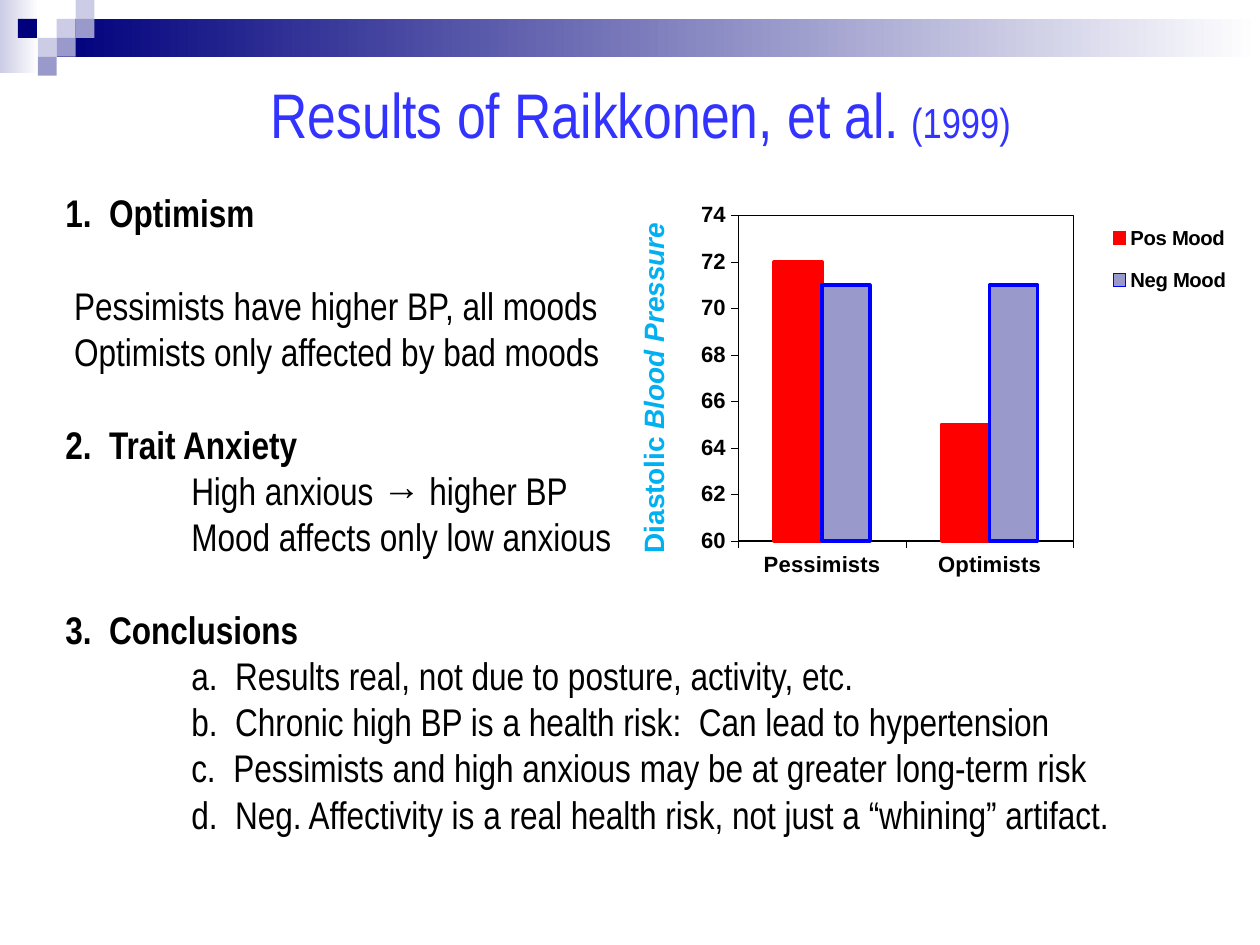
from lxml import etree
from pptx import Presentation
from pptx.chart.data import CategoryChartData
from pptx.dml.color import RGBColor
from pptx.enum.chart import XL_CHART_TYPE, XL_LEGEND_POSITION, XL_TICK_MARK
from pptx.enum.shapes import MSO_SHAPE
from pptx.enum.text import PP_ALIGN
from pptx.oxml import parse_xml
from pptx.oxml.ns import nsdecls, qn
from pptx.util import Inches, Pt

RECT = MSO_SHAPE.RECTANGLE
CENTER = PP_ALIGN.CENTER
CLUSTERED = XL_CHART_TYPE.COLUMN_CLUSTERED
RIGHT = XL_LEGEND_POSITION.RIGHT
OUTSIDE = XL_TICK_MARK.OUTSIDE


def rgb(color):
    return RGBColor.from_string(color)


def style(font, name, size, color, bold=False, italic=False):
    font.name = name
    font.size = Pt(size)
    font.color.rgb = rgb(color)
    font.bold = bold
    font.italic = italic


prs = Presentation()
prs.slide_width = Inches(10)
prs.slide_height = Inches(7.5)
s = prs.slides.add_slide(prs.slide_layouts[6])

CELL = 0.15
bands = [
    (0, 0, 0.31, 0.58, "CCCCE6"),
    (0.45, CELL, 9.55, 0.3, "00007D"),
]
squares = [
    (3, 1, "CCCCE6"),
    (4, 0, "CCCCE6"),
    (4, 1, "9999CC"),
    (2, 2, "CCCCE6"),
    (0.95, 1, "00007D"),
    (3, 2, "9999CC"),
    (2, 3, "9999CC"),
]
for x, y, w, h, color in bands:
    sp = s.shapes.add_shape(RECT, Inches(x), Inches(y), Inches(w), Inches(h))
    sp.shadow.inherit = False
    sp.line.fill.background()
    sp.fill.gradient()
    sp.fill.gradient_angle = 0
    for stop, stop_color, position in zip(sp.fill.gradient_stops, (color, "FFFFFF"), (0, 1)):
        stop.color.rgb = rgb(stop_color)
        stop.position = position
for col, row, color in squares:
    sp = s.shapes.add_shape(RECT, Inches(col * CELL), Inches(row * CELL), Inches(CELL), Inches(CELL))
    sp.shadow.inherit = False
    sp.line.fill.background()
    sp.fill.solid()
    sp.fill.fore_color.rgb = rgb(color)

sections = [
    ("1.  Optimism", 0.07, 0.37, [
        "Pessimists have higher BP, all moods",
        "Optimists only affected by bad moods",
    ]),
    ("2.  Trait Anxiety", 1, 0, [
        "High anxious → higher BP",
        "Mood affects only low anxious",
    ]),
    ("3.  Conclusions", 1, 0, [
        "a.  Results real, not due to posture, activity, etc.",
        "b.  Chronic high BP is a health risk:  Can lead to hypertension",
        "c.  Pessimists and high anxious may be at greater long-term risk",
        "d.  Neg. Affectivity is a real health risk, not just a “whining” artifact.",
    ]),
]
tf = s.shapes.add_textbox(Inches(0.42), Inches(1.45), Inches(9), Inches(5.28)).text_frame
tf.word_wrap = True
for i, (heading, indent, gap, points) in enumerate(sections):
    p = tf.add_paragraph() if i else tf.paragraphs[0]
    p.text = heading
    p.space_before = Inches(0.37 if i else 0)
    p.space_after = Inches(gap)
    style(p.runs[0].font, "Arial Narrow", 22, "000000", bold=True)
    for point in points:
        p = tf.add_paragraph()
        p.text = point
        p._p.get_or_add_pPr().set("marL", str(Inches(indent)))
        style(p.runs[0].font, "Arial Narrow", 22, "000000")

tf = s.shapes.add_textbox(Inches(1.25), Inches(0.55), Inches(7.67), Inches(0.7)).text_frame
tf.word_wrap = True
p = tf.paragraphs[0]
p.alignment = CENTER
for text, font, size in [
    ("Results of Raikkonen, et al.", "Arial Narrow", 36),
    (" ", "Arial", 24),
    ("(1999)", "Arial Narrow", 24),
]:
    r = p.add_run()
    r.text = text
    style(r.font, font, size, "3333FF")

data = CategoryChartData()
data.categories = ["Pessimists", "Optimists"]
data.add_series("Pos Mood", (72, 65))
data.add_series("Neg Mood", (71, 71))
chart = s.shapes.add_chart(CLUSTERED, Inches(5.31), Inches(1.44), Inches(4.54), Inches(3.42), data).chart
chart.has_title = False
style(chart.font, "Arial", 12.6, "000000", bold=True)
chart.has_legend = True
chart.legend.position = RIGHT
chart.legend.include_in_layout = False
style(chart.legend.font, "Arial", 11.6, "000000", bold=True)

for axis in (chart.category_axis, chart.value_axis):
    axis.has_major_gridlines = False
    axis.major_tick_mark = OUTSIDE
    axis.format.line.color.rgb = rgb("000000")
    axis.format.line.width = Pt(0.17)
    style(axis.tick_labels.font, "Arial", 12.6, "000000", bold=True)
chart.value_axis.minimum_scale = 60
chart.value_axis.maximum_scale = 74
chart.value_axis.major_unit = 2

plot = chart.plots[0]
plot.gap_width = 150
plot.overlap = 0
plot.vary_by_categories = False
for series, fill, line in zip(plot.series, ("FF0000", "9999CC"), ("FF0000", "0000FF")):
    series.invert_if_negative = False
    series.format.fill.solid()
    series.format.fill.fore_color.rgb = rgb(fill)
    series.format.line.color.rgb = rgb(line)
    series.format.line.width = Pt(2.09)

plot_area = chart._chartSpace.find(".//" + qn("c:plotArea"))
legend = chart._chartSpace.find(".//" + qn("c:legend"))
for parent, index, target, box in [
    (plot_area, 0, "inner", (0.121, 0.079, 0.586, 0.755)),
    (legend, 1, None, (0.75, 0.06, 0.25, 0.24)),
]:
    for old in parent.findall(qn("c:layout")):
        parent.remove(old)
    layout = etree.Element(qn("c:layout"))
    manual = etree.SubElement(layout, qn("c:manualLayout"))
    settings = [("layoutTarget", target)] if target else []
    settings += [("xMode", "edge"), ("yMode", "edge"), *zip("xywh", box)]
    for tag, value in settings:
        etree.SubElement(manual, qn("c:" + tag)).set("val", str(value))
    parent.insert(index, layout)
plot_area.append(parse_xml(
    f'<c:spPr {nsdecls("c", "a")}><a:noFill/><a:ln w="9525"><a:solidFill>'
    '<a:srgbClr val="000000"/></a:solidFill></a:ln></c:spPr>'
))

tf = s.shapes.add_textbox(Inches(5), Inches(1.67), Inches(0.47), Inches(2.82)).text_frame
tf.word_wrap = False
tf._txBody.bodyPr.set("vert", "vert270")
p = tf.paragraphs[0]
p.alignment = CENTER
for text, italic in [("Diastolic ", False), ("Blood Pressure", True)]:
    r = p.add_run()
    r.text = text
    style(r.font, "Arial", 16, "00B0F0", bold=True, italic=italic)

prs.save("out.pptx")
